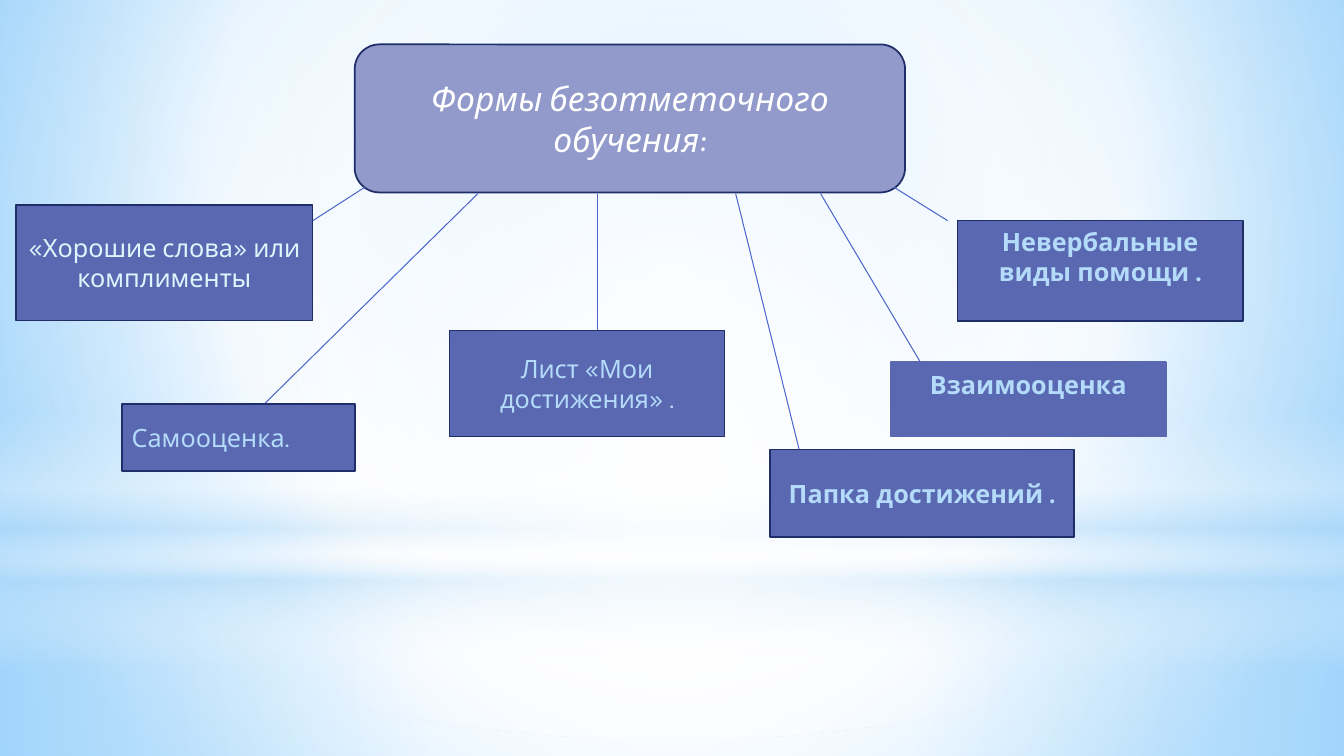
from lxml import etree
from pptx import Presentation
from pptx.dml.color import RGBColor
from pptx.enum.shapes import MSO_CONNECTOR, MSO_SHAPE
from pptx.enum.text import MSO_ANCHOR, MSO_AUTO_SIZE, PP_ALIGN
from pptx.oxml.ns import qn
from pptx.util import Cm, Pt

RECTANGLE = MSO_SHAPE.RECTANGLE
ROUNDED = MSO_SHAPE.ROUNDED_RECTANGLE
OVAL = MSO_SHAPE.OVAL
STRAIGHT = MSO_CONNECTOR.STRAIGHT
MIDDLE = MSO_ANCHOR.MIDDLE
NO_AUTOFIT = MSO_AUTO_SIZE.NONE
LEFT, CENTER = PP_ALIGN.LEFT, PP_ALIGN.CENTER

FONT = "Karla"
WHITE, PALE, SKY = "FFFFFF", "DFF5FD", "B4DCFA"
INDIGO, NAVY, LAVENDER, RAY_BLUE = "5968B0", "1F2E69", "919ACA", "4E67C8"

HEADING_AREA = (8.94, 1.12, 13.87, 3.73)
BACKDROP = [(0, "9ED5FF", 100), (60, WHITE, 100), (100, "5BB9FF", 100)]
CENTRED = (50, 50, 50, 50)
GLOWS = [
    (RECTANGLE, (0, 14.17, 33.87, 4.88),
     [(0, WHITE, 91), (37, WHITE, 76), (100, SKY, 79)], CENTRED),
    (RECTANGLE, (0, 0, 33.87, 14.17),
     [(0, WHITE, 89), (48, WHITE, 62), (100, SKY, 79)], CENTRED),
    (RECTANGLE, (0, 10.46, 33.87, 6.35),
     [(0, WHITE, 0), (29, WHITE, 30), (45, SKY, 40),
      (55, WHITE, 26), (65, SKY, 60), (100, WHITE, 0)], None),
    (OVAL, (0, 4.45, 33.87, 14.17),
     [(0, WHITE, 100), (56, WHITE, 0)], CENTRED),
]
RAYS = [
    (22.53, 4.72, 23.88, 5.56),
    (9.19, 4.72, 6.53, 6.43),
    (20.68, 4.88, 23.19, 9.12),
    (12.04, 4.88, 6.65, 10.19),
    (18.54, 4.88, 20.14, 11.33),
    (15.06, 4.88, 15.06, 9.32),
]
FORMS = [
    ("«Хорошие слова» или комплименты", (0.41, 5.16, 7.47, 2.92), {"color": PALE}),
    ("Невербальные виды помощи .", (24.13, 5.56, 7.19, 2.54),
     {"bold": True, "bottom": 0.85}),
    ("Самооценка.", (3.07, 10.19, 5.87, 1.68), {"align": LEFT}),
    ("Взаимооценка", (22.45, 9.12, 6.93, 1.88),
     {"bold": True, "bottom": 0.85, "outline": INDIGO}),
    ("Папка достижений .", (19.41, 11.33, 7.65, 2.21), {"bold": True}),
    ("Лист «Мои достижения» .", (11.33, 8.33, 6.93, 2.67), {}),
]


def rgb(value):
    return RGBColor.from_string(value)


def paint_gradient(fill, owner, stops, focus):
    fill.gradient()
    gradient = next(owner.iter(qn("a:gradFill")))
    for child in list(gradient):
        gradient.remove(child)
    stop_list = etree.SubElement(gradient, qn("a:gsLst"))
    for position, color, opacity in stops:
        stop = etree.SubElement(stop_list, qn("a:gs"), pos=str(position * 1000))
        tint = etree.SubElement(stop, qn("a:srgbClr"), val=color)
        if opacity < 100:
            etree.SubElement(tint, qn("a:alpha"), val=str(opacity * 1000))
    if focus is None:
        etree.SubElement(gradient, qn("a:lin"), ang="5400000", scaled="0")
    else:
        route = etree.SubElement(gradient, qn("a:path"), path="circle")
        edges = {side: str(share * 1000) for side, share in zip("ltrb", focus)}
        etree.SubElement(route, qn("a:fillToRect"), **edges)


def add_glow(slide, kind, area, stops, focus):
    glow = slide.shapes.add_shape(kind, *map(Cm, area))
    glow.shadow.inherit = False
    glow.line.fill.background()
    paint_gradient(glow.fill, glow._element, stops, focus)


def add_panel(slide, kind, area, fill, outline):
    panel = slide.shapes.add_shape(kind, *map(Cm, area))
    panel.shadow.inherit = False
    panel.fill.solid()
    panel.fill.fore_color.rgb = rgb(fill)
    panel.line.color.rgb = rgb(outline)
    panel.line.width = Pt(1.25)
    return panel


def write(frame, text, size, color, align=CENTER, bold=False, italic=False):
    frame.word_wrap = True
    frame.auto_size = NO_AUTOFIT
    frame.vertical_anchor = MIDDLE
    paragraph = frame.paragraphs[0]
    paragraph.alignment = align
    run = paragraph.add_run()
    run.text = text
    run.font.name = FONT
    run.font.size = Pt(size)
    run.font.bold = bold
    run.font.italic = italic
    run.font.color.rgb = rgb(color)


def add_heading(slide):
    add_panel(slide, ROUNDED, HEADING_AREA, LAVENDER, NAVY)
    heading = slide.shapes.title
    heading.left, heading.top, heading.width, heading.height = map(Cm, HEADING_AREA)
    write(heading.text_frame, "Формы безотметочного обучения:", 24, WHITE, italic=True)
    slide.shapes._spTree.append(heading._element)


def add_ray(slide, ends):
    ray = slide.shapes.add_connector(STRAIGHT, *map(Cm, ends))
    ray.line.color.rgb = rgb(RAY_BLUE)
    ray.line.width = Pt(0.75)
    etree.SubElement(ray._element.spPr, qn("a:effectLst"))


def add_form(slide, text, area, color=SKY, align=CENTER, bold=False,
             bottom=0.13, outline=NAVY):
    form = add_panel(slide, RECTANGLE, area, INDIGO, outline)
    form.text_frame.margin_bottom = Cm(bottom)
    write(form.text_frame, text, 18, color, align, bold)


def main():
    prs = Presentation()
    prs.slide_width, prs.slide_height = Cm(33.87), Cm(19.05)
    slide = prs.slides.add_slide(prs.slide_layouts[5])
    paint_gradient(slide.background.fill, slide._element, BACKDROP, (20, 10, 20, 60))
    for glow in GLOWS:
        add_glow(slide, *glow)
    add_heading(slide)
    for ends in RAYS:
        add_ray(slide, ends)
    for text, area, style in FORMS:
        add_form(slide, text, area, **style)
    prs.save("out.pptx")


if __name__ == "__main__":
    main()
